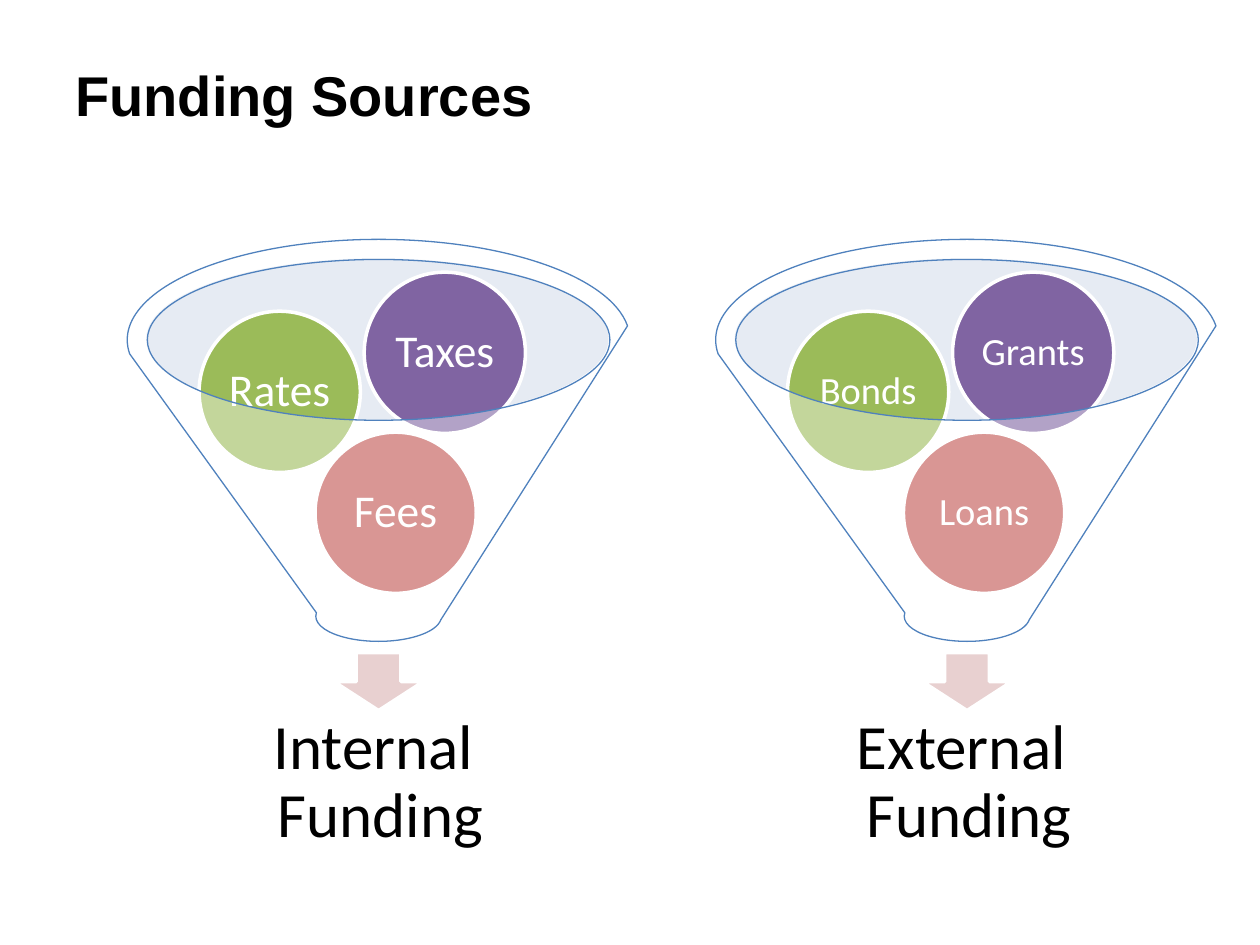
from pptx import Presentation
from pptx.dml.color import RGBColor
from pptx.enum.shapes import MSO_SHAPE as Kind
from pptx.enum.text import MSO_ANCHOR as Anchor, PP_ALIGN as Align
from pptx.oxml.ns import qn
from pptx.util import Inches, Pt
from lxml import etree


def paint(shape, fill, line=None, width=2, alpha=None):
    shape.shadow.inherit = False
    shape.fill.solid()
    shape.fill.fore_color.rgb = RGBColor.from_string(fill)
    if alpha:
        color = shape.fill._xPr.find(qn("a:solidFill"))[0]
        etree.SubElement(color, qn("a:alpha")).set("val", str(alpha * 1000))
    if line:
        shape.line.color.rgb = RGBColor.from_string(line)
        shape.line.width = Pt(width)
    else:
        shape.line.fill.background()


def write(shape, text, size, color, font="Calibri", inset=0.1, bold=False, align=Align.CENTER):
    frame = shape.text_frame
    frame.word_wrap = True
    frame.vertical_anchor = Anchor.MIDDLE
    frame.margin_left = frame.margin_right = Inches(inset)
    frame.margin_top = frame.margin_bottom = Inches(inset)
    frame.text = text
    para = frame.paragraphs[0]
    para.alignment = align
    para.line_spacing = 0.9 if font == "Calibri" else 1.0
    for run in para.runs:
        run.font.name = font
        run.font.size = Pt(size)
        run.font.bold = bold
        run.font.color.rgb = RGBColor.from_string(color)


deck = Presentation()
deck.slide_width, deck.slide_height = Inches(10), Inches(7.5)
slide = deck.slides.add_slide(deck.slide_layouts[6])
shapes = slide.shapes

title = shapes.add_textbox(Inches(0.5), Inches(0.12), Inches(9), Inches(1.25))
write(title, "Funding Sources", 32, "000000", "Arial", bold=True, align=Align.LEFT)

balls = [(1.49, 3.43, "C0504D"), (0.57, 2.47, "9BBB59"), (1.88, 2.16, "8064A2")]
groups = [
    (1.01, "Internal \vFunding", ["Fees", "Rates", "Taxes"], 26, 0.04),
    (5.68, "External \vFunding", ["Loans", "Bonds", "Grants"], 22, 0.03),
]

for left, label, names, size, inset in groups:
    rim = shapes.add_shape(Kind.OVAL, Inches(left + 0.15), Inches(2.05), Inches(3.67), Inches(1.28))
    paint(rim, "C2CDE1", alpha=40)

    arrow = shapes.add_shape(Kind.DOWN_ARROW, Inches(left + 1.64), Inches(5.18), Inches(0.71), Inches(0.46))
    paint(arrow, "E8D0D0", "FFFFFF")

    box = shapes.add_textbox(Inches(left + 0.3), Inches(5.79), Inches(3.42), Inches(0.85))
    write(box, label, 36, "000000", inset=0.28)

    for (x, y, color), name in zip(balls, names):
        ball = shapes.add_shape(Kind.OVAL, Inches(left + x), Inches(y), Inches(1.28), Inches(1.28))
        paint(ball, color, "FFFFFF")
        write(ball, name, size, "FFFFFF", inset=inset)

    funnel = shapes.add_shape(Kind.FUNNEL, Inches(left), Inches(1.9), Inches(3.99), Inches(3.19))
    paint(funnel, "FFFFFF", "4F81BD", 0.75, alpha=40)

deck.save("out.pptx")
